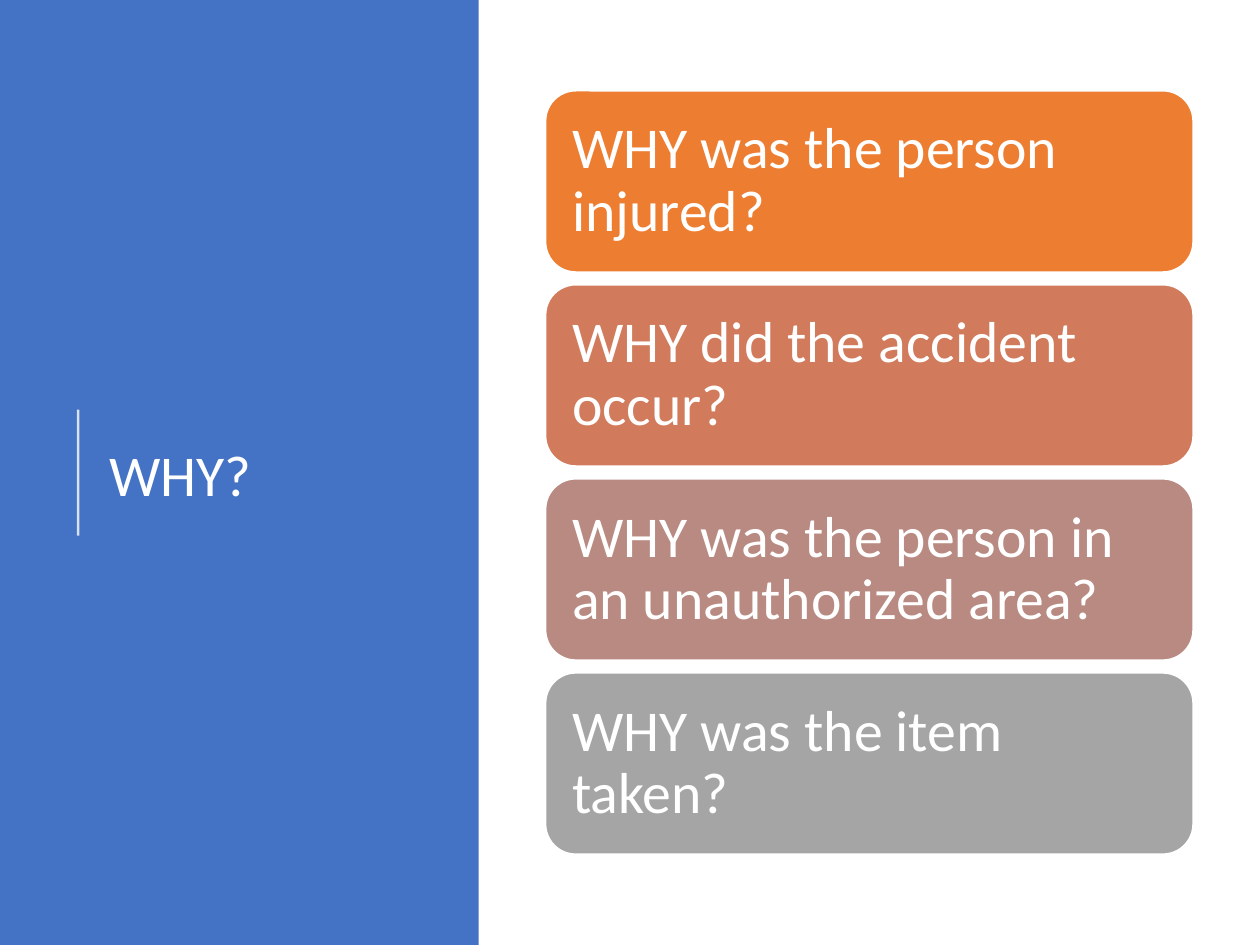
from pptx import Presentation
from pptx.dml.color import RGBColor
from pptx.enum.shapes import MSO_CONNECTOR, MSO_SHAPE
from pptx.enum.text import MSO_ANCHOR, PP_ALIGN
from pptx.oxml.ns import qn
from pptx.util import Inches, Pt
from lxml.etree import SubElement

COLORS = {"panel": "4472C4", "white": "FFFFFF"}
QUESTIONS = [
    ("WHY was the person injured?", "ED7D31"),
    ("WHY did the accident occur?", "D17B5C"),
    ("WHY was the person in an unauthorized area?", "B98A82"),
    ("WHY was the item taken?", "A5A5A5"),
]
CARD_LEFT, CARD_TOP, CARD_W, CARD_H, ROW = 4.33, 0.72, 5.14, 1.44, 1.54


def rgb(value):
    return RGBColor.from_string(value)


def write(sp, text, inset):
    tf = sp.text_frame
    tf.word_wrap = True
    tf.vertical_anchor = MSO_ANCHOR.MIDDLE
    tf.margin_left = tf.margin_right = Inches(inset)
    tf.margin_top = tf.margin_bottom = Inches(inset)
    p = tf.paragraphs[0]
    p.text = text
    p.alignment = PP_ALIGN.LEFT
    p.line_spacing = 0.9
    p.font.name = "Calibri"
    p.font.size = Pt(33)
    p.font.color.rgb = rgb(COLORS["white"])


prs = Presentation()
prs.slide_width, prs.slide_height = Inches(10), Inches(7.5)
s = prs.slides.add_slide(prs.slide_layouts[6])

# Left panel
panel = s.shapes.add_shape(MSO_SHAPE.RECTANGLE, 0, 0, Inches(3.8), prs.slide_height)
panel.shadow.inherit = False
panel.fill.solid()
panel.fill.fore_color.rgb = rgb(COLORS["panel"])
panel.line.fill.background()

# Title
title = s.shapes.add_textbox(Inches(0.77), Inches(0.78), Inches(2.76), Inches(6.02))
write(title, "WHY?", 0.1)

# Translucent rule beside the title
rule = s.shapes.add_connector(
    MSO_CONNECTOR.STRAIGHT, Inches(0.62), Inches(4.25), Inches(0.62), Inches(3.25))
rule.line.width = Pt(1.5)
rule.line.color.rgb = rgb(COLORS["white"])
color = rule.line._ln.find(qn("a:solidFill")).find(qn("a:srgbClr"))
SubElement(color, qn("a:alpha")).set("val", "80000")
SubElement(rule._element.spPr, qn("a:effectLst"))

# Question cards
for i, (question, fill) in enumerate(QUESTIONS):
    card = s.shapes.add_shape(
        MSO_SHAPE.ROUNDED_RECTANGLE, Inches(CARD_LEFT), Inches(CARD_TOP + i * ROW),
        Inches(CARD_W), Inches(CARD_H))
    card.adjustments[0] = 1 / 6
    card.shadow.inherit = False
    card.fill.solid()
    card.fill.fore_color.rgb = rgb(fill)
    card.line.color.rgb = rgb(COLORS["white"])
    card.line.width = Pt(1)
    write(card, question, 0.14)

prs.save("out.pptx")
